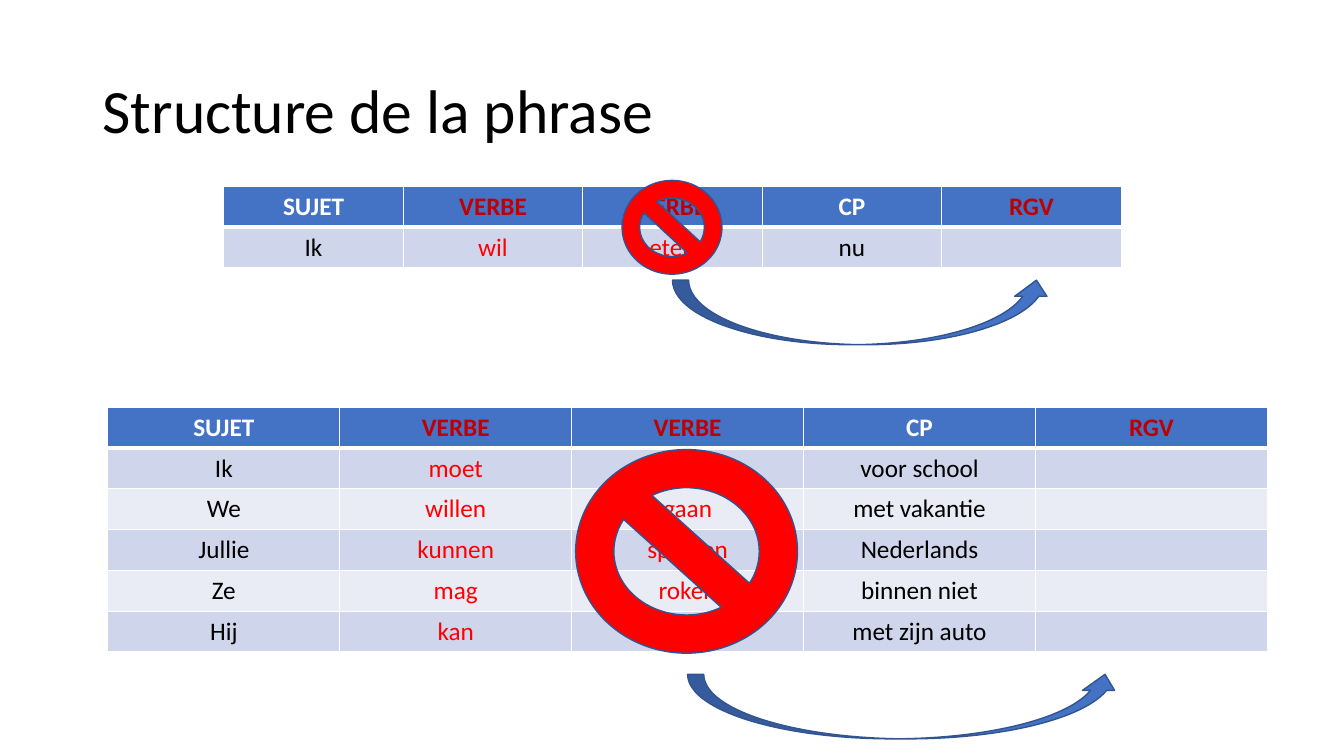
from lxml.etree import SubElement
from pptx import Presentation
from pptx.dml.color import RGBColor
from pptx.enum.shapes import MSO_SHAPE as Shape
from pptx.enum.text import MSO_ANCHOR as Anchor, PP_ALIGN as Align
from pptx.oxml.ns import qn
from pptx.util import Inches, Pt

TITLE = "Structure de la phrase"
HEADINGS = ["SUJET", "VERBE", "VERBE", "CP", "RGV"]
MANY_SENTENCES = [
    ["Ik", "moet", "studeren", "voor school", ""],
    ["We", "willen", "gaan", "met vakantie", ""],
    ["Jullie", "kunnen", "spreken", "Nederlands", ""],
    ["Ze", "mag", "roken", "binnen niet", ""],
    ["Hij", "kan", "rijden", "met zijn auto", ""],
]
ONE_SENTENCE = [["Ik", "wil", "eten", "nu", ""]]
VERB_COLUMNS = {1, 2, 4}
FONT = "Calibri"
COLOURS = {
    "white": "FFFFFF", "black": "000000", "blue": "4472C4", "outline": "325491",
    "red": "FF0000", "dark_red": "C00000", "band": "CFD5EA", "pale_band": "E9EBF5",
}
PAGE_WIDTH, PAGE_HEIGHT = 13.33, 7.5
ROW_HEIGHT = 0.405
TABLES = [(1.07, 4.04, 2.3, MANY_SENTENCES), (2.22, 1.85, 1.78, ONE_SENTENCE)]
MARKS = [
    (Shape.NO_SYMBOL, "red", 6.17, 1.79, 0.99, 0.93),
    (Shape.CURVED_UP_ARROW, "blue", 6.67, 2.78, 3.77, 0.64),
    (Shape.NO_SYMBOL, "red", 5.71, 4.46, 2.2, 2.02),
    (Shape.CURVED_UP_ARROW, "blue", 6.82, 6.69, 4.3, 0.64),
]


def colour(name):
    return RGBColor.from_string(COLOURS[name])


def add_span(para, text, size, shade, bold=False):
    span = para.add_run()
    span.text = text
    span.font.name, span.font.size, span.font.bold = FONT, Pt(size), bold
    span.font.color.rgb = colour(shade)


def add_borders(cell, row):
    properties = cell._tc.get_or_add_tcPr()
    thick_side = {0: "lnB", 1: "lnT"}.get(row)
    for side in ("lnL", "lnR", "lnT", "lnB"):
        width = Pt(3 if side == thick_side else 1)
        line = SubElement(properties, qn("a:" + side), w=str(width))
        fill = SubElement(line, qn("a:solidFill"))
        SubElement(fill, qn("a:srgbClr"), val=COLOURS["white"])


def cell_colours(row, column):
    is_verb = column in VERB_COLUMNS
    if row == 0:
        return "blue", "dark_red" if is_verb else "white"
    return "band" if row % 2 else "pale_band", "red" if is_verb else "black"


def add_sentences(page, left, top, column_width, sentences):
    rows = [HEADINGS] + sentences
    frame = page.shapes.add_table(
        len(rows), len(HEADINGS), Inches(left), Inches(top),
        Inches(column_width * len(HEADINGS)), Inches(ROW_HEIGHT * len(rows)))
    table = frame.table
    for row, words in enumerate(rows):
        for column, word in enumerate(words):
            cell = table.cell(row, column)
            background, shade = cell_colours(row, column)
            add_borders(cell, row)
            cell.fill.solid()
            cell.fill.fore_color.rgb = colour(background)
            para = cell.text_frame.paragraphs[0]
            para.alignment = Align.CENTER
            if word:
                add_span(para, word, 18, shade, row == 0)


def add_title(page):
    box = page.shapes.add_textbox(Inches(0.92), Inches(0.4), Inches(11.5), Inches(1.45))
    box.text_frame.word_wrap = True
    box.text_frame.vertical_anchor = Anchor.MIDDLE
    para = box.text_frame.paragraphs[0]
    para.line_spacing = 0.9
    add_span(para, TITLE, 44, "black")


def add_mark(page, kind, shade, *place):
    mark = page.shapes.add_shape(kind, *map(Inches, place))
    mark.shadow.inherit = False
    mark.fill.solid()
    mark.fill.fore_color.rgb = colour(shade)
    mark.line.color.rgb = colour("outline")
    mark.line.width = Pt(1)


def main():
    deck = Presentation()
    deck.slide_width, deck.slide_height = Inches(PAGE_WIDTH), Inches(PAGE_HEIGHT)
    page = deck.slides.add_slide(deck.slide_layouts[6])
    add_title(page)
    for table in TABLES:
        add_sentences(page, *table)
    for mark in MARKS:
        add_mark(page, *mark)
    deck.save("out.pptx")


if __name__ == "__main__":
    main()
